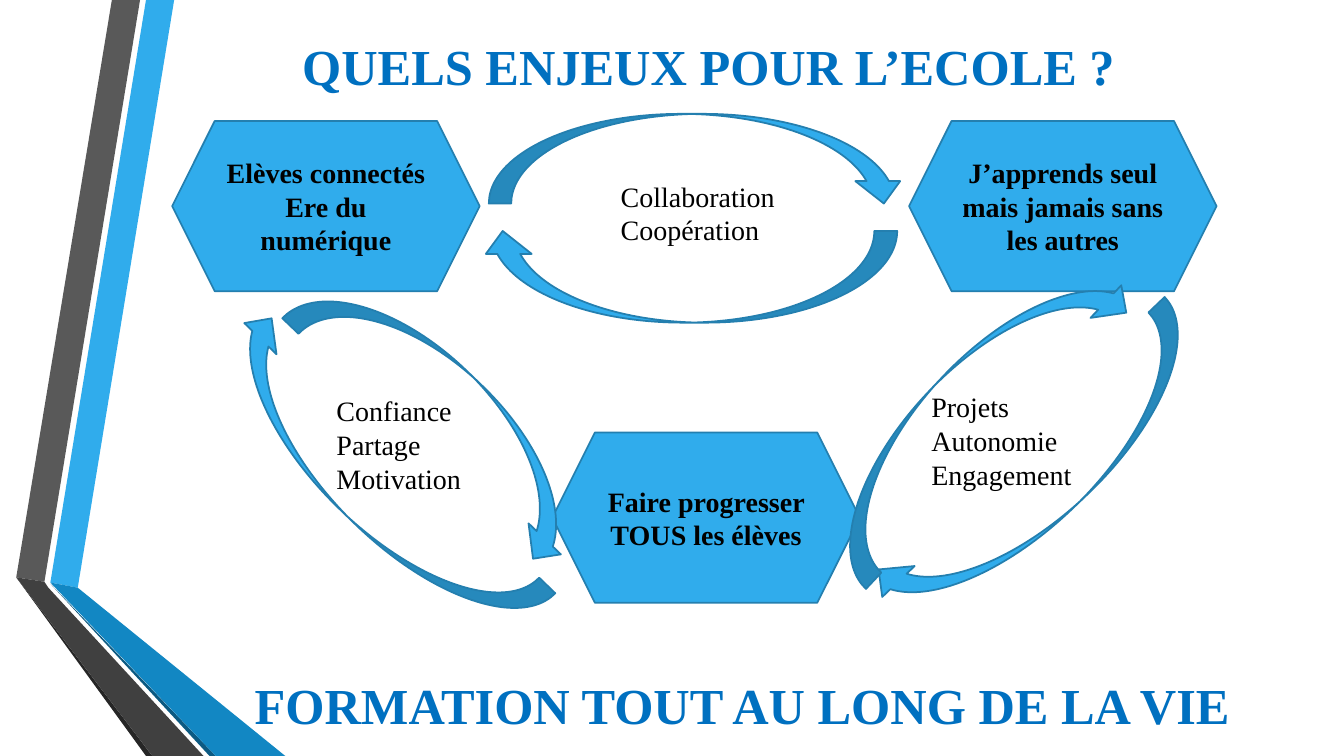
from dataclasses import dataclass

from pptx import Presentation
from pptx.dml.color import RGBColor
from pptx.enum import shapes, text
from pptx.util import Cm, Pt

FONT = "Times New Roman"
SKY = RGBColor(0x30, 0xAC, 0xEC)
OUTLINE = RGBColor(0x24, 0x7F, 0xAF)
HEADING = RGBColor(0x00, 0x70, 0xC0)
BLACK = RGBColor(0, 0, 0)
STEEL = RGBColor(0x59, 0x59, 0x59)
CHARCOAL = RGBColor(0x40, 0x40, 0x40)
COAL = RGBColor(0x26, 0x26, 0x26)
DEEP_BLUE = RGBColor(0x12, 0x87, 0xC3)
NAVY = RGBColor(0x0C, 0x5A, 0x82)

HEXAGON_SIZE = (7.75, 4.29)


@dataclass(frozen=True)
class Ribbon:
    color: RGBColor
    points: tuple[tuple[float, float], ...]


@dataclass(frozen=True)
class Idea:
    left: float
    top: float
    lines: tuple[str, ...]


@dataclass(frozen=True)
class Arrow:
    left: float
    top: float
    width: float
    height: float
    rotation: float


@dataclass(frozen=True)
class Label:
    left: float
    top: float
    width: float
    height: float
    lines: tuple[str, ...]
    size: int = 20
    color: RGBColor = BLACK
    bold: bool = False


RIBBONS = (
    Ribbon(SKY, ((1.27, 14.68), (1.96, 14.81), (4.39, 0), (3.68, 0))),
    Ribbon(STEEL, ((3.53, 0), (2.82, 0), (0.41, 14.55), (1.12, 14.66))),
    Ribbon(COAL, ((0.41, 14.55), (3.68, 19.05), (3.84, 19.05))),
    Ribbon(NAVY, ((1.27, 14.71), (5.28, 19.05), (5.44, 19.05))),
    Ribbon(DEEP_BLUE, ((1.27, 14.68), (5.44, 19.05), (7.19, 19.05), (1.96, 14.81))),
    Ribbon(CHARCOAL, ((5.13, 19.05), (1.22, 14.81), (1.12, 14.66), (0.41, 14.55), (3.84, 19.05))),
)

IDEAS = (
    Idea(4.34, 3.05, ("Elèves connectés", "Ere du numérique")),
    Idea(13.92, 10.9, ("Faire progresser TOUS les élèves",)),
    Idea(22.91, 3.05, ("J’apprends seul mais jamais sans les autres",)),
)

ARROWS = (
    Arrow(12.32, 2.87, 10.52, 2.26, 0),
    Arrow(4.17, 10.97, 10.52, 2.26, 224.1),
    Arrow(21.06, 10.8, 10.52, 2.26, 136.4),
    Arrow(12.09, 5.82, 10.52, 2.31, 180),
    Arrow(19.41, 9.25, 10.13, 2.26, 313.3),
    Arrow(6.6, 9.3, 9.32, 2.26, 43.8),
)

LABELS = (
    Label(15.39, 4.39, 4.95, 1.96, ("Collaboration", "Coopération")),
    Label(8.23, 9.8, 3.84, 2.82, ("Confiance", "Partage", "Motivation")),
    Label(23.22, 9.7, 4.5, 2.82, ("Projets", "Autonomie", "Engagement")),
    Label(6.17, 16.87, 25.6, 1.8, ("FORMATION TOUT AU LONG DE LA VIE",), 36, HEADING, True),
)


def write_lines(frame, lines: tuple[str, ...], size: int, color: RGBColor, bold: bool, align) -> None:
    frame.word_wrap = True
    for index, line in enumerate(lines):
        para = frame.paragraphs[0] if index == 0 else frame.add_paragraph()
        para.alignment = align
        span = para.add_run()
        span.text = line
        span.font.name = FONT
        span.font.size = Pt(size)
        span.font.bold = bold
        span.font.color.rgb = color


def paint(shape) -> None:
    shape.shadow.inherit = False
    shape.fill.solid()
    shape.fill.fore_color.rgb = SKY
    shape.line.color.rgb = OUTLINE
    shape.line.width = Pt(1.25)


def write_title(page) -> None:
    title = page.shapes.title
    title.left, title.top, title.width, title.height = Cm(3.94), Cm(0.46), Cm(27.84), Cm(2.36)
    title.text_frame.vertical_anchor = text.MSO_ANCHOR.MIDDLE
    lines = ("QUELS ENJEUX POUR L’ECOLE ?",)
    write_lines(title.text_frame, lines, 36, HEADING, True, text.PP_ALIGN.CENTER)


def draw_ribbon(page, ribbon: Ribbon) -> None:
    start, *rest = [(Cm(x), Cm(y)) for x, y in ribbon.points]
    builder = page.shapes.build_freeform(*start)
    builder.add_line_segments(rest, close=True)
    shape = builder.convert_to_shape()
    shape.shadow.inherit = False
    shape.fill.solid()
    shape.fill.fore_color.rgb = ribbon.color
    shape.line.fill.background()


def draw_idea(page, idea: Idea) -> None:
    width, height = HEXAGON_SIZE
    hexagon = page.shapes.add_shape(
        shapes.MSO_SHAPE.HEXAGON, Cm(idea.left), Cm(idea.top), Cm(width), Cm(height)
    )
    paint(hexagon)
    hexagon.text_frame.vertical_anchor = text.MSO_ANCHOR.MIDDLE
    write_lines(hexagon.text_frame, idea.lines, 20, BLACK, True, text.PP_ALIGN.CENTER)


def draw_arrow(page, arrow: Arrow) -> None:
    shape = page.shapes.add_shape(
        shapes.MSO_SHAPE.CURVED_DOWN_ARROW,
        Cm(arrow.left), Cm(arrow.top), Cm(arrow.width), Cm(arrow.height),
    )
    shape.rotation = arrow.rotation
    paint(shape)


def draw_label(page, label: Label) -> None:
    box = page.shapes.add_textbox(
        Cm(label.left), Cm(label.top), Cm(label.width), Cm(label.height)
    )
    write_lines(
        box.text_frame, label.lines, label.size, label.color, label.bold, text.PP_ALIGN.LEFT
    )


def main() -> None:
    deck = Presentation()
    deck.slide_width, deck.slide_height = Cm(33.87), Cm(19.05)
    page = deck.slides.add_slide(deck.slide_layouts.get_by_name("Title Only"))
    for ribbon in RIBBONS:
        draw_ribbon(page, ribbon)
    write_title(page)
    for idea in IDEAS:
        draw_idea(page, idea)
    for arrow in ARROWS:
        draw_arrow(page, arrow)
    for label in LABELS:
        draw_label(page, label)
    deck.save("out.pptx")


if __name__ == "__main__":
    main()
